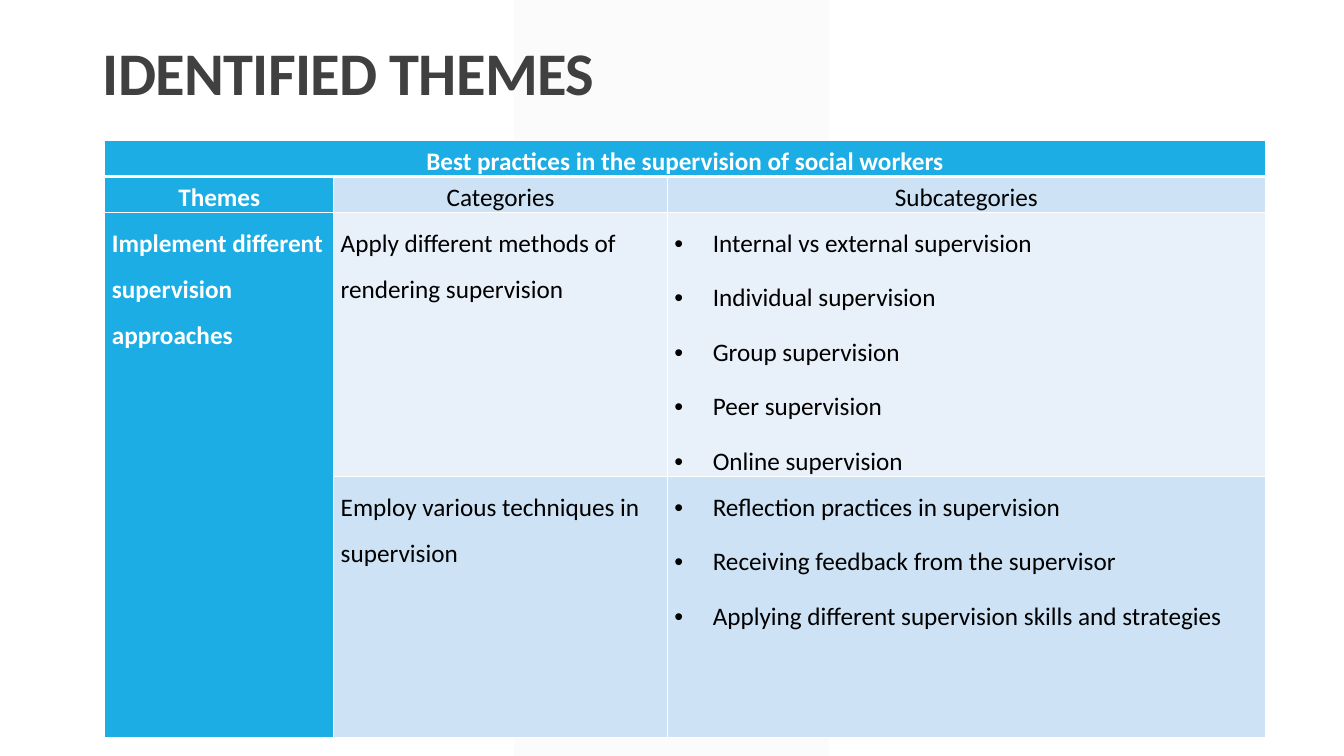
"""Build the slide "Identified themes" with its table of supervision practices."""
from dataclasses import dataclass

import lxml.etree
import pptx
import pptx.dml.color
import pptx.enum.shapes
import pptx.enum.text
import pptx.oxml.ns
import pptx.util

Inches = pptx.util.Inches
Align = pptx.enum.text.PP_ALIGN
qn = pptx.oxml.ns.qn


@dataclass(frozen=True)
class Theme:
    font: str = "Calibri"
    title_size: float = 43.2
    table_size: float = 18
    title: str = "404040"
    accent: str = "1CADE4"
    dark_band: str = "CDE3F5"
    light_band: str = "E8F1FA"
    white: str = "FFFFFF"
    black: str = "000000"
    stripe: str = "F2F2F2"


theme = Theme()


def rgb(color):
    return pptx.dml.color.RGBColor.from_string(color)


def write(frame, lines, size=theme.table_size, color=theme.black, bold=False,
          align=Align.LEFT, line_spacing=1.5, gap=3, bullet=False, tracking=None):
    frame.word_wrap = True
    for index, line in enumerate(lines):
        para = frame.paragraphs[0] if index == 0 else frame.add_paragraph()
        para.alignment = align
        para.line_spacing = line_spacing
        para.space_before = para.space_after = pptx.util.Pt(gap)
        span = para.add_run()
        span.text = line
        span.font.name = theme.font
        span.font.size = pptx.util.Pt(size)
        span.font.bold = bold
        span.font.color.rgb = rgb(color)
        if tracking is not None:
            span.font._element.set("spc", str(tracking))
        if bullet:
            properties = para._p.get_or_add_pPr()
            properties.set("marL", str(Inches(0.38)))
            properties.set("indent", str(-Inches(0.38)))
            lxml.etree.SubElement(properties, qn("a:buFont"), typeface="Arial")
            lxml.etree.SubElement(properties, qn("a:buChar"), char="•")


deck = pptx.Presentation()
deck.slide_width = Inches(13.33)
deck.slide_height = Inches(7.5)
page = deck.slides.add_slide(deck.slide_layouts[6])

stripe = page.shapes.add_shape(
    pptx.enum.shapes.MSO_SHAPE.PARALLELOGRAM,
    Inches(5.1), Inches(0), Inches(3.12), Inches(7.5))
stripe.adjustments[0] = 0
stripe.shadow.inherit = False
stripe.line.fill.background()
stripe.fill.solid()
stripe.fill.fore_color.rgb = rgb(theme.stripe)
stripe_color = stripe._element.spPr.find(qn("a:solidFill"))[0]
lxml.etree.SubElement(stripe_color, qn("a:alpha"), val="30000")

title = page.shapes.add_textbox(Inches(0.92), Inches(0.4), Inches(11.5), Inches(1.28))
title.text_frame.margin_top = Inches(0.09)
write(title.text_frame, ["IDENTIFIED THEMES"], size=theme.title_size, color=theme.title,
      bold=True, line_spacing=0.8, gap=0, tracking=-50)

column_widths = [2.27, 3.31, 5.93]
row_heights = [0.36, 0.36, 2.62, 2.59]
table = page.shapes.add_table(
    len(row_heights), len(column_widths), Inches(1.04), Inches(1.39),
    Inches(sum(column_widths)), Inches(sum(row_heights))).table
table.horz_banding = False
for column, width in zip(table.columns, column_widths):
    column.width = Inches(width)
for row, height in zip(table.rows, row_heights):
    row.height = Inches(height)

row_fills = [theme.accent, theme.dark_band, theme.light_band, theme.dark_band]
for row_index, row in enumerate(table.rows):
    for column_index, cell in enumerate(row.cells):
        cell.margin_left = cell.margin_right = Inches(0.07)
        cell.margin_top = cell.margin_bottom = 0
        properties = cell._tc.get_or_add_tcPr()
        for side in ("L", "R", "T", "B"):
            thick = (row_index, side) in [(0, "B"), (1, "T")]
            border = lxml.etree.SubElement(
                properties, qn(f"a:ln{side}"), w=str(pptx.util.Pt(3 if thick else 1)))
            border_fill = lxml.etree.SubElement(border, qn("a:solidFill"))
            lxml.etree.SubElement(border_fill, qn("a:srgbClr"), val=theme.white)
        cell.fill.solid()
        cell.fill.fore_color.rgb = rgb(
            theme.accent if column_index == 0 else row_fills[row_index])

table.cell(0, 0).merge(table.cell(0, 2))
table.cell(2, 0).merge(table.cell(3, 0))

contents = {
    (0, 0): ["Best practices in the supervision of social workers"],
    (1, 0): ["Themes"],
    (1, 1): ["Categories"],
    (1, 2): ["Subcategories"],
    (2, 0): ["Implement different supervision approaches"],
    (2, 1): ["Apply different methods of rendering supervision"],
    (2, 2): ["Internal vs external supervision", "Individual supervision",
             "Group supervision", "Peer supervision", "Online supervision"],
    (3, 1): ["Employ various techniques in supervision"],
    (3, 2): ["Reflection practices in supervision",
             "Receiving feedback from the supervisor",
             "Applying different supervision skills and strategies"],
}
for (row_index, column_index), lines in contents.items():
    heading = row_index < 2
    accented = column_index == 0
    write(table.cell(row_index, column_index).text_frame, lines,
          color=theme.white if accented else theme.black, bold=accented,
          align=Align.CENTER if heading else Align.LEFT,
          line_spacing=1.2 if heading else 1.5,
          bullet=column_index == 2 and not heading)

deck.save("out.pptx")
